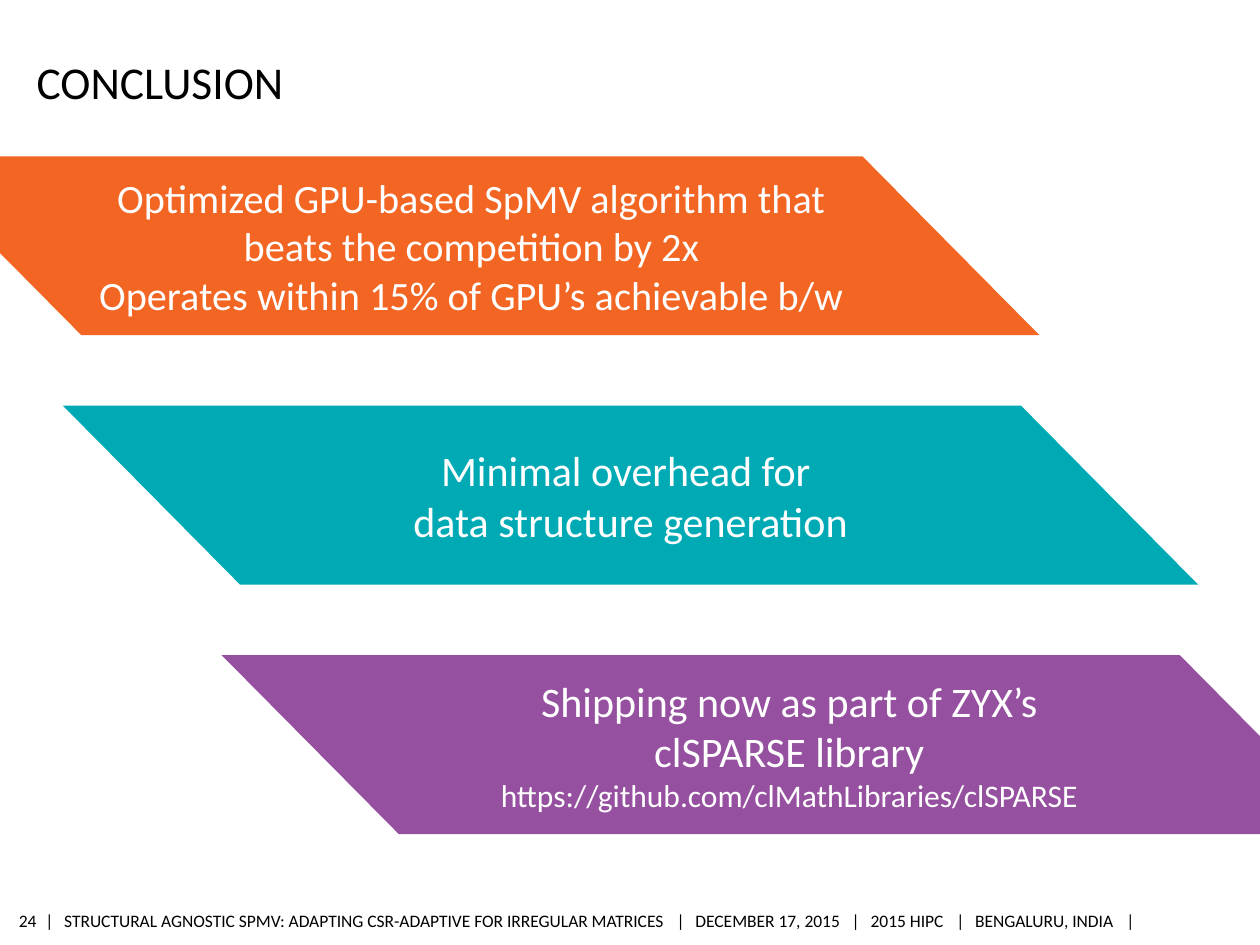
"""Build the conclusion slide with three staggered statement bands."""
from dataclasses import dataclass

from lxml import etree
from pptx import Presentation
from pptx.dml.color import RGBColor
from pptx.enum.shapes import MSO_SHAPE
from pptx.enum.text import MSO_ANCHOR, MSO_AUTO_SIZE, PP_ALIGN
from pptx.oxml.ns import qn
from pptx.slide import Slide
from pptx.text.text import TextFrame
from pptx.util import Inches, Pt

BAND_SHAPE = MSO_SHAPE.PARALLELOGRAM
MIDDLE, BOTTOM = MSO_ANCHOR.MIDDLE, MSO_ANCHOR.BOTTOM
LEFT, CENTER, RIGHT = PP_ALIGN.LEFT, PP_ALIGN.CENTER, PP_ALIGN.RIGHT
NO_FIT = MSO_AUTO_SIZE.NONE


@dataclass(frozen=True)
class Theme:
    """Colours and type sizes of the slide."""

    font: str = "Calibri"
    black: str = "000000"
    white: str = "FFFFFF"
    orange: str = "F26522"
    teal: str = "00AAB5"
    purple: str = "9650A0"
    title: int = 26
    statement: int = 24
    dense: int = 23
    link: int = 18
    footer: int = 10


@dataclass(frozen=True)
class Line:
    """One paragraph and its type size."""

    text: str
    size: int


@dataclass(frozen=True)
class Band:
    """A coloured band and its lines."""

    fill: str
    lines: tuple[Line, ...]


THEME = Theme()
BANDS = (
    Band(THEME.orange, (
        Line("Optimized GPU-based SpMV algorithm that", THEME.dense),
        Line("beats the competition by 2x", THEME.dense),
        Line("Operates within 15% of GPU’s achievable b/w", THEME.dense),
    )),
    Band(THEME.teal, (
        Line("Minimal overhead for ", THEME.statement),
        Line("data structure generation", THEME.statement),
    )),
    Band(THEME.purple, (
        Line("Shipping now as part of ZYX’s", THEME.statement),
        Line("clSPARSE library", THEME.statement),
        Line("https://github.com/clMathLibraries/clSPARSE", THEME.link),
    )),
)
BAND_LEFT, BAND_TOP, BAND_W, BAND_H = -0.76, 1.24, 9.01, 1.42
STEP_X, STEP_Y = 1.26, 1.98
FOOTER = (
    "STRUCTURAL AGNOSTIC SPMV: ADAPTING CSR-ADAPTIVE FOR IRREGULAR MATRICES",
    "DECEMBER 17, 2015",
    "2015 HIPC",
    "BENGALURU, INDIA",
)
BAR_STOPS = (0, 5.01, 6.4, 7.23, 8.58)
BAR_GAP = 0.15


def write(tf: TextFrame, lines: tuple[Line, ...], color: str, align: PP_ALIGN,
          frame: dict) -> None:
    """Format a text frame and fill it with lines."""
    for name, value in frame.items():
        setattr(tf, name, value)
    for i, line in enumerate(lines):
        p = tf.paragraphs[0] if i == 0 else tf.add_paragraph()
        p.alignment = align
        r = p.add_run()
        r.text = line.text
        for name, value in {"name": THEME.font, "size": Pt(line.size)}.items():
            setattr(r.font, name, value)
        r.font.color.rgb = RGBColor.from_string(color)


def add_title(s: Slide, text: str) -> None:
    """Place the title placeholder."""
    sp = s.shapes.title
    place = {"left": 0.29, "top": 0.34, "width": 8.4, "height": 0.52}
    for name, value in place.items():
        setattr(sp, name, Inches(value))
    frame = {"vertical_anchor": BOTTOM, "auto_size": NO_FIT, "margin_left": 0,
             "margin_right": 0, "margin_top": Inches(0.05), "margin_bottom": 0}
    write(sp.text_frame, (Line(text, THEME.title),), THEME.black, LEFT, frame)


def add_band(s: Slide, band: Band, index: int) -> None:
    """Draw one band, shifted right and down by its index."""
    sp = s.shapes.add_shape(
        BAND_SHAPE, Inches(BAND_LEFT + index * STEP_X),
        Inches(BAND_TOP + index * STEP_Y), Inches(BAND_W), Inches(BAND_H))
    sp.adjustments[0] = 0.99
    sp.shadow.inherit = False
    sp.fill.solid()
    sp.fill.fore_color.rgb = RGBColor.from_string(band.fill)
    sp.line.fill.background()
    sp._element.spPr.find(qn("a:xfrm")).set("flipH", "1")
    write(sp.text_frame, band.lines, THEME.white, CENTER,
          {"vertical_anchor": MIDDLE, "word_wrap": True})


def add_footer(s: Slide, left: float, width: float, text: str, align: PP_ALIGN,
               stops: tuple[float, ...] = ()) -> None:
    """Add a footer text box with optional tab stops."""
    box = s.shapes.add_textbox(Inches(left), Inches(7.18), Inches(width), Inches(0.26))
    frame = {"vertical_anchor": MIDDLE, "word_wrap": True, "margin_left": 0,
             "margin_right": 0, "margin_top": Inches(0.04),
             "margin_bottom": Inches(0.04)}
    tf = box.text_frame
    if stops:
        pPr = tf.paragraphs[0]._p.get_or_add_pPr()
        tabs = etree.SubElement(pPr, qn("a:tabLst"))
        for stop in stops:
            etree.SubElement(tabs, qn("a:tab"), pos=str(Inches(stop)), algn="l")
    write(tf, (Line(text, THEME.footer),), THEME.black, align, frame)


def main() -> None:
    """Build and save the slide."""
    prs = Presentation()
    prs.slide_width, prs.slide_height = Inches(10), Inches(7.5)
    s = prs.slides.add_slide(prs.slide_layouts[5])
    add_title(s, "CONCLUSION")
    for i, band in enumerate(BANDS):
        add_band(s, band, i)
    stops = tuple(x for bar in BAR_STOPS for x in (bar, bar + BAR_GAP))[1:-1]
    text = "|\t" + "\t|\t".join(FOOTER) + "\t|"
    add_footer(s, 0.36, 8.73, text, LEFT, stops)
    add_footer(s, 0.13, 0.16, "24", RIGHT)
    prs.save("out.pptx")


if __name__ == "__main__":
    main()
